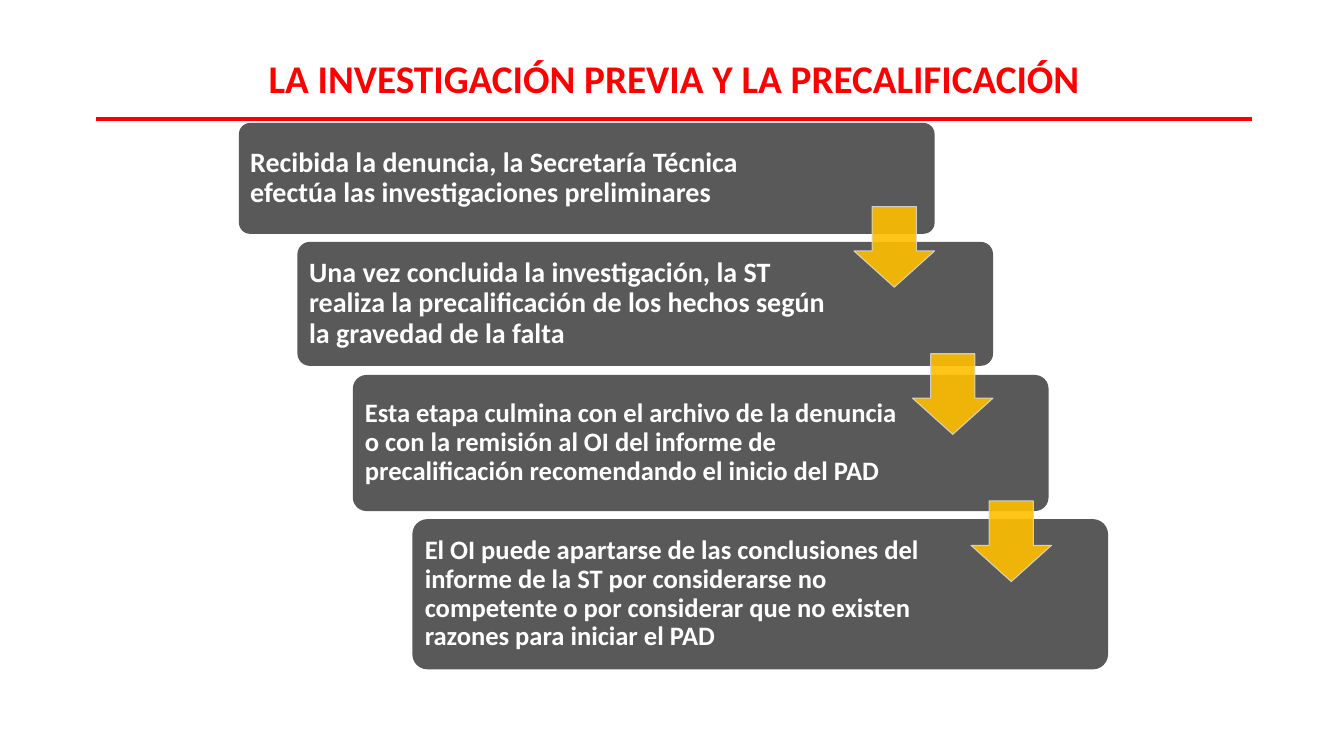
from dataclasses import dataclass

from pptx import Presentation
from pptx.dml.color import RGBColor
from pptx.enum.shapes import MSO_CONNECTOR, MSO_SHAPE
from pptx.enum.text import MSO_ANCHOR, MSO_AUTO_SIZE, PP_ALIGN
from pptx.oxml.ns import qn
from pptx.util import Inches, Pt
from lxml.etree import SubElement


@dataclass(frozen=True)
class Theme:
    """Colours, font and type sizes of the slide."""
    font: str = "Calibri"
    red: RGBColor = RGBColor(0xFF, 0x00, 0x00)
    gray: RGBColor = RGBColor(0x59, 0x59, 0x59)
    white: RGBColor = RGBColor(0xFF, 0xFF, 0xFF)
    gold: RGBColor = RGBColor(0xFF, 0xC0, 0x00)
    pale: RGBColor = RGBColor(0xD8, 0xD8, 0xD8)
    title_size: int = 28
    large_size: int = 20
    small_size: int = 19


THEME = Theme()
STEP_WIDTH = 6.9
ARROW_SIZE = 0.8
STEPS = [
    (2.37, 1.22, 1.1, THEME.large_size,
     "Recibida la denuncia, la Secretaría Técnica efectúa las investigaciones preliminares"),
    (2.95, 2.4, 1.23, THEME.large_size,
     "Una vez concluida la investigación, la ST realiza la precalificación de los hechos "
     "según la gravedad de la falta"),
    (3.5, 3.72, 1.35, THEME.small_size,
     "Esta etapa culmina con el archivo de la denuncia o con la remisión al OI del informe "
     "de precalificación recomendando el inicio del PAD"),
    (4.09, 5.15, 1.49, THEME.small_size,
     "El OI puede apartarse de las conclusiones del informe de la ST por considerarse no "
     "competente o por considerar que no existen razones para iniciar el PAD"),
]


def add_bold_run(paragraph, text, size, color):
    """Add one bold run in the theme font."""
    run = paragraph.add_run()
    run.text = text
    run.font.name = THEME.font
    run.font.size = Pt(size)
    run.font.bold = True
    run.font.color.rgb = color


def set_opacity(fill_parent, percent):
    """Make the solid fill held by an element partly transparent."""
    color = fill_parent.find(qn("a:solidFill"))[0]
    SubElement(color, qn("a:alpha")).set("val", str(percent * 1000))


def add_title(slide, left, top, width, height):
    """Place the centred title and the rule below it."""
    rule_top = Inches(top + height + 0.12)
    rule = slide.shapes.add_connector(
        MSO_CONNECTOR.STRAIGHT, Inches(left), rule_top, Inches(left + width), rule_top)
    rule.line.color.rgb = THEME.red
    rule.line.width = Pt(2.25)
    SubElement(rule._element.spPr, qn("a:effectLst"))
    box = slide.shapes.add_textbox(Inches(left), Inches(top), Inches(width), Inches(height))
    frame = box.text_frame
    frame.word_wrap = True
    frame.auto_size = MSO_AUTO_SIZE.SHAPE_TO_FIT_TEXT
    paragraph = frame.paragraphs[0]
    paragraph.alignment = PP_ALIGN.CENTER
    add_bold_run(paragraph, "LA INVESTIGACIÓN PREVIA Y LA PRECALIFICACIÓN",
                 THEME.title_size, THEME.red)


def add_step(slide, left, top, width, height, size, text):
    """Place one rounded step, keeping its right side free for an arrow."""
    shape = slide.shapes.add_shape(
        MSO_SHAPE.ROUNDED_RECTANGLE, Inches(left), Inches(top), Inches(width), Inches(height))
    shape.adjustments[0] = 0.1
    shape.shadow.inherit = False
    shape.fill.solid()
    shape.fill.fore_color.rgb = THEME.gray
    shape.line.fill.background()
    frame = shape.text_frame
    frame.word_wrap = True
    frame.vertical_anchor = MSO_ANCHOR.MIDDLE
    frame.margin_left = frame.margin_top = frame.margin_bottom = Inches(0.08)
    frame.margin_right = Inches(1.45)
    paragraph = frame.paragraphs[0]
    paragraph.alignment = PP_ALIGN.LEFT
    paragraph.line_spacing = 0.9
    add_bold_run(paragraph, text, size, THEME.white)


def add_arrow(slide, left, top, size):
    """Place one translucent down arrow in a square box."""
    arrow = slide.shapes.add_shape(
        MSO_SHAPE.DOWN_ARROW, Inches(left), Inches(top), Inches(size), Inches(size))
    arrow.adjustments[0] = 0.55
    arrow.adjustments[1] = 0.45
    arrow.shadow.inherit = False
    arrow.fill.solid()
    arrow.fill.fore_color.rgb = THEME.gold
    arrow.line.color.rgb = THEME.pale
    arrow.line.width = Pt(0.75)
    properties = arrow._element.spPr
    set_opacity(properties, 90)
    set_opacity(properties.find(qn("a:ln")), 90)


def add_staircase(slide):
    """Place the descending steps, then the arrows that link them."""
    for left, top, height, size, text in STEPS:
        add_step(slide, left, top, STEP_WIDTH, height, size, text)
    for index in range(len(STEPS) - 1):
        add_arrow(slide, 8.47 + 0.58 * index, 2.05 + 1.46 * index, ARROW_SIZE)


def main():
    """Build and save the presentation."""
    presentation = Presentation()
    presentation.slide_width = Inches(13.33)
    presentation.slide_height = Inches(7.5)
    slide = presentation.slides.add_slide(presentation.slide_layouts[6])
    add_title(slide, 0.95, 0.49, 11.47, 0.57)
    add_staircase(slide)
    presentation.save("out.pptx")


if __name__ == "__main__":
    main()
